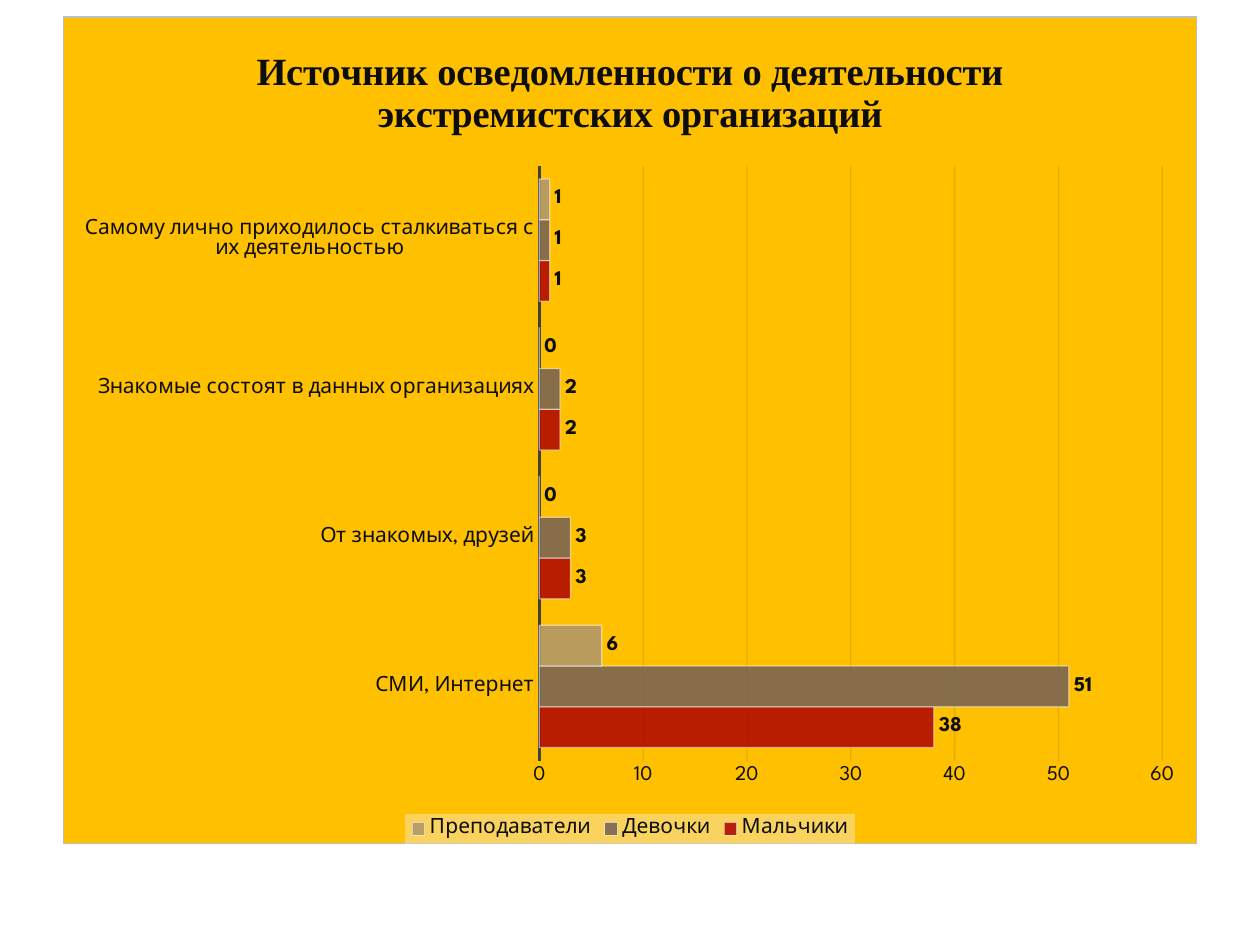
from dataclasses import dataclass

from lxml import etree
from pptx import Presentation
from pptx.chart.data import CategoryChartData
from pptx.dml.color import RGBColor
from pptx.enum import chart as ch
from pptx.oxml import parse_xml
from pptx.oxml.ns import nsdecls, qn
from pptx.util import Cm, Pt


@dataclass(frozen=True)
class Theme:
    ink: str = "0D0D0D"
    back: str = "FFC000"
    edge: str = "BFBFBF"
    axis: str = "404040"
    white: str = "FFFFFF"
    pale: str = "F2F2F2"
    face: str = "League Spartan"
    serif: str = "Times New Roman"
    head: float = 22
    body: float = 12
    thin: float = 0.75
    thick: float = 1.5


THEME = Theme()
TITLE = "Источник осведомленности о деятельности экстремистских организаций"
CATS = [
    "СМИ, Интернет",
    "От знакомых, друзей",
    "Знакомые состоят в данных организациях",
    "Самому лично приходилось сталкиваться с их деятельностью",
]
SERIES = [
    ("Мальчики", "AD0101", (38, 3, 2, 1)),
    ("Девочки", "726056", (51, 3, 2, 1)),
    ("Преподаватели", "AC956E", (6, 0, 0, 1)),
]


def paint(fill, color, alpha=100):
    """Fill with a solid colour; alpha is opacity in percent."""
    fill.solid()
    fill.fore_color.rgb = RGBColor.from_string(color)
    if alpha < 100:
        tag = fill._xPr.find(qn("a:solidFill"))[0]
        etree.SubElement(tag, qn("a:alpha"), val=str(alpha * 1000))


def rule(line, color, width, alpha=100):
    line.width = Pt(width)
    paint(line.fill, color, alpha)


def style(font, size=THEME.body, face=THEME.face, bold=False):
    font.size = Pt(size)
    font.name = face
    font.bold = bold
    font.color.rgb = RGBColor.from_string(THEME.ink)


def frame(chart):
    """Add the chart area's fill and border, which need XML."""
    area = parse_xml(
        f'<c:spPr {nsdecls("c", "a")}>'
        f'<a:solidFill><a:srgbClr val="{THEME.back}"/></a:solidFill>'
        f'<a:ln w="{Pt(THEME.thin)}"><a:solidFill>'
        f'<a:srgbClr val="{THEME.edge}"/></a:solidFill></a:ln></c:spPr>'
    )
    chart._chartSpace.chart.addnext(area)


def place(chart, x, y, w, h):
    """Set the inner plot area as fractions of the chart."""
    plot = chart._chartSpace.chart.plotArea
    for old in plot.findall(qn("c:layout")):
        plot.remove(old)
    sizes = "".join(
        f'<c:{key} val="{val}"/>' for key, val in zip("xywh", (x, y, w, h))
    )
    plot.insert(0, parse_xml(
        f'<c:layout {nsdecls("c")}><c:manualLayout>'
        '<c:layoutTarget val="inner"/><c:xMode val="edge"/>'
        f'<c:yMode val="edge"/>{sizes}</c:manualLayout></c:layout>'
    ))


def head(chart):
    box = chart.chart_title.text_frame
    box.text = TITLE
    style(box.paragraphs[0].runs[0].font, THEME.head, THEME.serif, True)
    chart.chart_title.include_in_layout = False


def axes(chart):
    for axis in (chart.category_axis, chart.value_axis):
        axis.major_tick_mark = ch.XL_TICK_MARK.NONE
        axis.minor_tick_mark = ch.XL_TICK_MARK.NONE
        style(axis.tick_labels.font)
    rule(chart.category_axis.format.line, THEME.axis, THEME.thick)
    vals = chart.value_axis
    vals.format.line.fill.background()
    vals.minimum_scale, vals.maximum_scale, vals.major_unit = 0, 60, 10
    rule(vals.major_gridlines.format.line, THEME.ink, THEME.thin, 10)


def bars(chart):
    plot = chart.plots[0]
    plot.gap_width = 65
    plot.vary_by_categories = False
    for item, (_, color, _) in zip(plot.series, SERIES):
        item.invert_if_negative = False
        paint(item.format.fill, color, 85)
        rule(item.format.line, THEME.white, THEME.thin, 50)
        tags = item.data_labels
        tags.show_value = True
        tags.position = ch.XL_LABEL_POSITION.OUTSIDE_END
        style(tags.font, bold=True)


def legend(chart):
    chart.has_legend = True
    key = chart.legend
    key.position = ch.XL_LEGEND_POSITION.BOTTOM
    key.include_in_layout = False
    style(key.font)
    fill = parse_xml(
        f'<c:spPr {nsdecls("c", "a")}><a:solidFill>'
        f'<a:srgbClr val="{THEME.pale}"><a:alpha val="39000"/></a:srgbClr>'
        '</a:solidFill><a:ln><a:noFill/></a:ln></c:spPr>'
    )
    key._element.find(qn("c:txPr")).addprevious(fill)


def main():
    deck = Presentation()
    deck.slide_width, deck.slide_height = Cm(25.4), Cm(19.05)
    slide = deck.slides.add_slide(deck.slide_layouts[6])
    data = CategoryChartData()
    data.categories = CATS
    for name, _, vals in SERIES:
        data.add_series(name, vals)
    chart = slide.shapes.add_chart(
        ch.XL_CHART_TYPE.BAR_CLUSTERED,
        Cm(1.27), Cm(0.33), Cm(22.86), Cm(16.69), data,
    ).chart
    style(chart.font, 10)
    frame(chart)
    head(chart)
    axes(chart)
    bars(chart)
    legend(chart)
    place(chart, 0.42, 0.18, 0.55, 0.72)
    deck.save("out.pptx")


if __name__ == "__main__":
    main()
